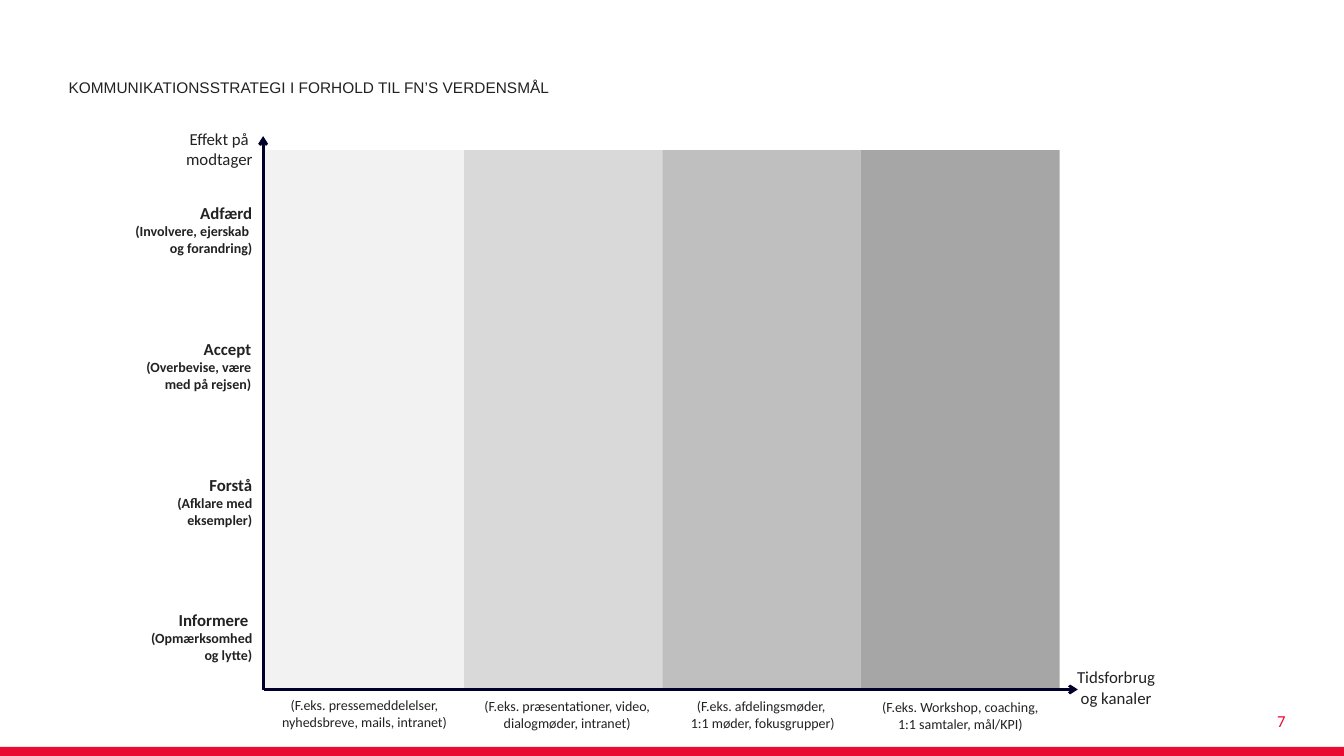
from dataclasses import dataclass

import lxml.etree
import pptx
import pptx.dml.color
import pptx.enum.shapes
import pptx.enum.text
import pptx.oxml.ns
import pptx.util

RGB = pptx.dml.color.RGBColor
ALIGN = pptx.enum.text.PP_ALIGN
ANCHOR = pptx.enum.text.MSO_ANCHOR
RED = RGB(0xE9, 0x0C, 0x30)
INK = RGB(0x22, 0x22, 0x22)
NAVY = RGB(0x00, 0x00, 0x2A)
GREY_1 = RGB(0xF2, 0xF2, 0xF2)
GREY_2 = RGB(0xD9, 0xD9, 0xD9)
GREY_3 = RGB(0xBF, 0xBF, 0xBF)
GREY_4 = RGB(0xA6, 0xA6, 0xA6)
EMU_PER_PX = 9144
COLUMN_LEFT, COLUMN_TOP, COLUMN_WIDTH, COLUMN_HEIGHT = 263, 149, 197, 535


@dataclass(frozen=True)
class Line:
    text: str
    size: int = 12
    bold: bool = False
    color: RGB = INK
    font: str = "Calibri"


@dataclass(frozen=True)
class Label:
    left: int
    top: int
    width: int
    height: int
    lines: tuple[Line, ...]
    align: ALIGN = ALIGN.CENTER
    wrap: bool = False


@dataclass(frozen=True)
class Column:
    fill: RGB
    caption: Label


@dataclass(frozen=True)
class Axis:
    x1: int
    y1: int
    x2: int
    y2: int


def px(n: int) -> int:
    return pptx.util.Emu(n * EMU_PER_PX)


def level(left: int, top: int, width: int, name: str, *details: str) -> Label:
    lines = (Line(name, 12, True), *(Line(d, 10, True) for d in details))
    return Label(left, top, width, 64, lines, ALIGN.RIGHT)


def caption(left: int, top: int, *texts: str) -> Label:
    return Label(left, top, 197, 44, tuple(Line(t, 10) for t in texts), wrap=True)


COLUMNS = (
    Column(GREY_1, caption(263, 686, "(F.eks. pressemeddelelser,", "nyhedsbreve, mails, intranet)")),
    Column(GREY_2, caption(464, 687, "(F.eks. præsentationer, video,", "dialogmøder, intranet)")),
    Column(GREY_3, caption(658, 687, "(F.eks. afdelingsmøder, ", "1:1 møder, fokusgrupper)")),
    Column(GREY_4, caption(854, 688, "(F.eks. Workshop, coaching,", "1:1 samtaler, mål/KPI)")),
)
AXES = (Axis(262, 684, 1069, 684), Axis(261, 685, 261, 135))
LABELS = (
    Label(1058, 657, 98, 50, (Line("Tidsforbrug"), Line("og kanaler"))),
    Label(174, 123, 87, 50, (Line("Effekt på"), Line("modtager"))),
    level(138, 600, 122, "Informere ", "(Opmærksomhed", "og lytte)"),
    level(165, 466, 95, "Forstå", "(Afklare med", "eksempler)"),
    level(133, 331, 126, "Accept", "(Overbevise, være", "med på rejsen)"),
    level(122, 196, 138, "Adfærd", "(Involvere, ejerskab ", "og forandring)"),
)
PAGE_NUMBER = Label(975, 700, 310, 30, (Line("7", color=RED),), ALIGN.RIGHT, True)
HEADING = Line("KOMMUNIKATIONSSTRATEGI I FORHOLD TIL FN’S VERDENSMÅL", 11, font="Arial")


def add_lines(p, lines: tuple[Line, ...]) -> None:
    for i, line in enumerate(lines):
        if i:
            p.add_line_break()
        r = p.add_run()
        r.text = line.text
        r.font.name = line.font
        r.font.size = pptx.util.Pt(line.size)
        r.font.bold = line.bold
        r.font.color.rgb = line.color


def add_label(s, label: Label) -> None:
    sp = s.shapes.add_textbox(px(label.left), px(label.top), px(label.width), px(label.height))
    tf = sp.text_frame
    tf.word_wrap = label.wrap
    p = tf.paragraphs[0]
    p.alignment = label.align
    add_lines(p, label.lines)


def add_block(s, left: int, top: int, width: int, height: int, fill: RGB) -> None:
    sp = s.shapes.add_shape(
        pptx.enum.shapes.MSO_SHAPE.RECTANGLE, px(left), px(top), px(width), px(height)
    )
    sp.shadow.inherit = False
    sp.fill.solid()
    sp.fill.fore_color.rgb = fill
    sp.line.fill.background()


def add_axis(s, axis: Axis) -> None:
    sp = s.shapes.add_connector(
        pptx.enum.shapes.MSO_CONNECTOR.STRAIGHT,
        px(axis.x1), px(axis.y1), px(axis.x2), px(axis.y2),
    )
    sp.line.color.rgb = NAVY
    sp.line.width = pptx.util.Pt(2)
    qn = pptx.oxml.ns.qn
    lxml.etree.SubElement(sp.line._get_or_add_ln(), qn("a:tailEnd"), type="arrow")
    lxml.etree.SubElement(sp._element.spPr, qn("a:effectLst"))


def format_heading(sp) -> None:
    sp.left, sp.top, sp.width, sp.height = px(58), px(71), px(760), px(30)
    tf = sp.text_frame
    tf.word_wrap = True
    tf.auto_size = pptx.enum.text.MSO_AUTO_SIZE.NONE
    tf.vertical_anchor = ANCHOR.BOTTOM
    p = tf.paragraphs[0]
    p.alignment = ALIGN.LEFT
    p.line_spacing = 0.9
    add_lines(p, (HEADING,))


def main() -> None:
    prs = pptx.Presentation()
    prs.slide_width, prs.slide_height = px(1333), px(750)
    s = prs.slides.add_slide(prs.slide_layouts.get_by_name("Title Only"))
    format_heading(s.shapes.title)
    add_block(s, 0, 741, 1333, 9, RED)
    add_label(s, PAGE_NUMBER)
    for i, column in enumerate(COLUMNS):
        left = COLUMN_LEFT + i * COLUMN_WIDTH
        add_block(s, left, COLUMN_TOP, COLUMN_WIDTH, COLUMN_HEIGHT, column.fill)
        add_label(s, column.caption)
    for axis in AXES:
        add_axis(s, axis)
    for label in LABELS:
        add_label(s, label)
    prs.save("out.pptx")


if __name__ == "__main__":
    main()
